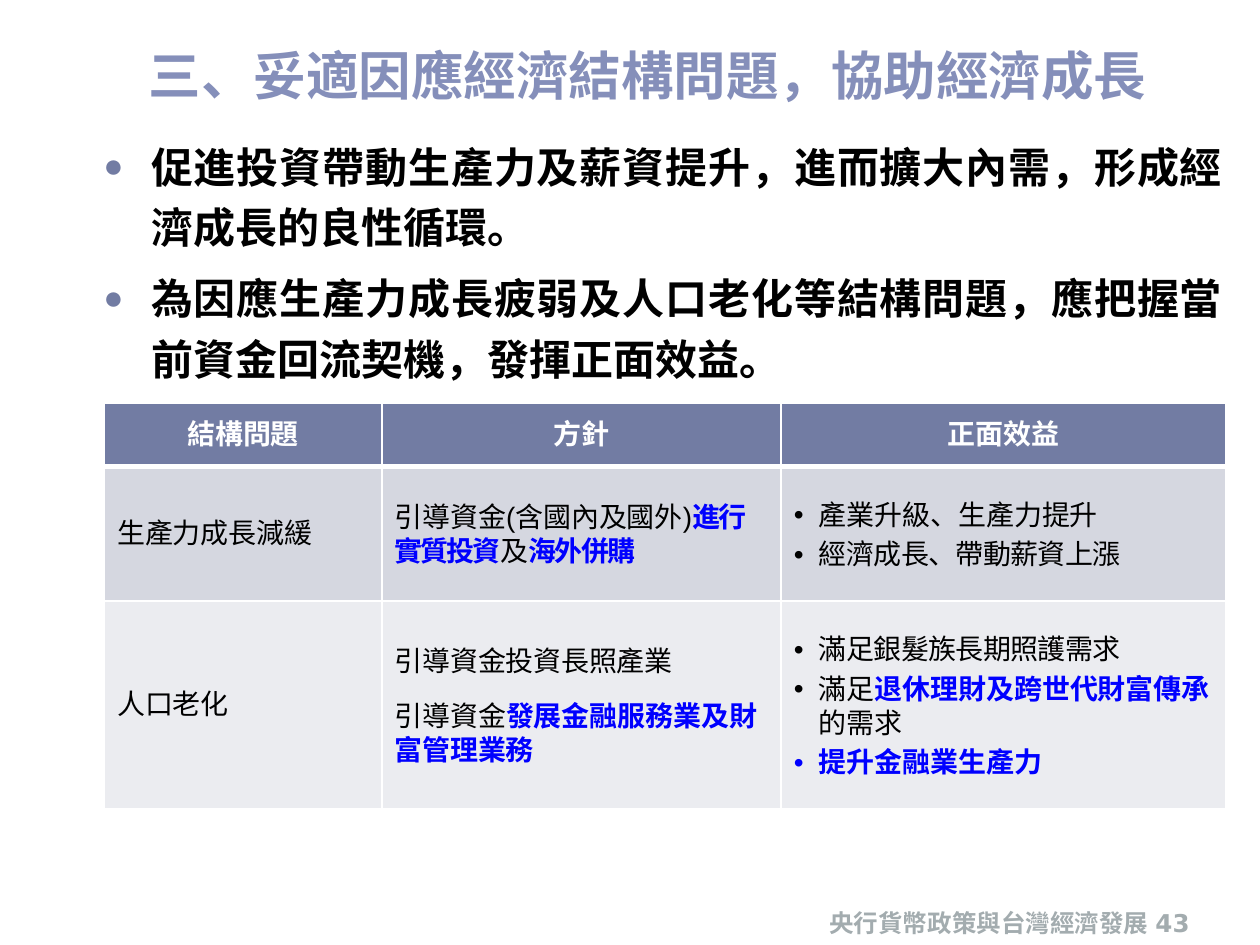
import lxml.etree
import pptx
import pptx.dml.color
import pptx.enum.text
import pptx.oxml.ns
import pptx.util

Inches = pptx.util.Inches
Pt = pptx.util.Pt
ALIGN = pptx.enum.text.PP_ALIGN
ANCHOR = pptx.enum.text.MSO_ANCHOR
SANS, ARIAL, NOTO = "DejaVu Sans", "Arial", "Noto Sans CJK SC"
BLACK, WHITE, BLUE, SLATE = "000000", "FFFFFF", "0000FF", "727CA3"
PERIWINKLE, GRAY = "858FBA", "A3ACAF"
ROW_FILLS = [SLATE, "D5D7E0", "EBECF0"]


def color(value):
    """Turn a hex string into a colour."""
    return pptx.dml.color.RGBColor.from_string(value)


def add_child(parent, tag, **attributes):
    """Append a DrawingML element with the given attributes."""
    child = lxml.etree.SubElement(parent, pptx.oxml.ns.qn(tag))
    for name, value in attributes.items():
        child.set(name, str(value))
    return child


def add_run(paragraph, text, size, font=SANS, fill=BLACK, bold=False, spacing=0):
    """Add one styled run; spacing is the tracking in points."""
    run = paragraph.add_run()
    run.text = text
    run.font.size = Pt(size)
    run.font.bold = bold
    run.font.color.rgb = color(fill)
    run.font.name = font
    properties = run.font._element
    add_child(properties, "a:ea", typeface=font)
    if spacing:
        properties.set("spc", str(round(spacing * 100)))


def set_bullet(paragraph, symbol, left, hanging, fill=None, percent=100):
    """Give a paragraph a hanging bullet."""
    properties = paragraph._p.get_or_add_pPr()
    properties.set("marL", str(Inches(left)))
    properties.set("indent", str(-Inches(hanging)))
    if fill:
        add_child(add_child(properties, "a:buClr"), "a:srgbClr", val=fill)
    add_child(properties, "a:buSzPct", val=percent * 1000)
    add_child(properties, "a:buFont", typeface=ARIAL)
    add_child(properties, "a:buChar", char=symbol)


def add_text_frame(slide, box, anchor, insets=(0.1, 0.05, 0.1, 0.05)):
    """Add a wrapping text box and return its frame."""
    frame = slide.shapes.add_textbox(*map(Inches, box)).text_frame
    frame.word_wrap = True
    frame.vertical_anchor = anchor
    (frame.margin_left, frame.margin_top,
     frame.margin_right, frame.margin_bottom) = map(Inches, insets)
    return frame


def next_paragraph(frame, index):
    """Return the first paragraph of a frame or a new one."""
    return frame.add_paragraph() if index else frame.paragraphs[0]


def add_title(slide, box):
    """Place the slide title."""
    frame = add_text_frame(slide, box, ANCHOR.MIDDLE, (0.39, 0.05, 0.1, 0.05))
    parts = [("三、", SANS), ("妥適因應", NOTO), ("經濟結構問題，協助經濟成長", SANS)]
    for text, font in parts:
        add_run(frame.paragraphs[0], text, 30, font, PERIWINKLE, True)


def add_key_points(slide, box):
    """Place the justified bullet points."""
    frame = add_text_frame(slide, box, ANCHOR.TOP, (0.2, 0.1, 0.1, 0.05))
    points = [
        "促進投資帶動生產力及薪資提升，進而擴大內需，形成經濟成長的良性循環。",
        "為因應生產力成長疲弱及人口老化等結構問題，應把握當前資金回流契機，發揮正面效益。",
    ]
    for index, text in enumerate(points):
        paragraph = next_paragraph(frame, index)
        set_bullet(paragraph, "●", 0.57, 0.38, SLATE, 80)
        paragraph.alignment = ALIGN.JUSTIFY
        paragraph.line_spacing = 1.2
        paragraph.space_after = Pt(6)
        add_run(paragraph, text, 24, bold=True)


def add_footer(slide, box):
    """Place the deck name and, at the right end, the page number."""
    left, top, width, height = box
    number_width = 0.6
    number_left = left + width - number_width - 0.06
    items = [
        ("央行貨幣政策與台灣經濟發展", box, ALIGN.CENTER),
        ("43", (number_left, top, number_width, height), ALIGN.RIGHT),
    ]
    for text, place, alignment in items:
        frame = add_text_frame(slide, place, ANCHOR.BOTTOM)
        frame.paragraphs[0].alignment = alignment
        add_run(frame.paragraphs[0], text, 14, fill=GRAY, bold=True)


def set_borders(cell, top, bottom):
    """Draw white cell borders, with top and bottom widths in points."""
    properties = cell._tc.get_or_add_tcPr()
    widths = {"a:lnL": 1, "a:lnR": 1, "a:lnT": top, "a:lnB": bottom}
    for tag, width in widths.items():
        line = add_child(properties, tag, w=Pt(width))
        add_child(add_child(line, "a:solidFill"), "a:srgbClr", val=WHITE)


def plain(text, spacing=0):
    """Describe a black table run."""
    return dict(text=text, spacing=spacing)


def strong(text, spacing=0):
    """Describe a bold blue table run."""
    return dict(text=text, spacing=spacing, fill=BLUE, bold=True)


def heading(text, font=ARIAL):
    """Describe a header cell."""
    return [[dict(text=text, font=font, fill=WHITE, bold=True)]]


def fill_cell(cell, paragraphs, row, column):
    """Write the paragraphs of one cell in the style of its row and column."""
    set_borders(cell, 3 if row == 1 else 1, 3 if row == 0 else 1)
    cell.fill.solid()
    cell.fill.fore_color.rgb = color(ROW_FILLS[row])
    cell.vertical_anchor = ANCHOR.MIDDLE
    for index, runs in enumerate(paragraphs):
        paragraph = next_paragraph(cell.text_frame, index)
        if row == 0:
            paragraph.alignment = ALIGN.CENTER
        elif column > 0:
            if column == 2:
                set_bullet(paragraph, "•", 0.2, 0.2)
            elif index < len(paragraphs) - 1:
                paragraph.space_after = Pt(6)
            paragraph.line_spacing = 1.1
            if index:
                paragraph.space_before = Pt(3 if column == 2 else 6)
        for run in runs:
            add_run(paragraph, **{"size": 16, "font": ARIAL, **run})


def add_policy_table(slide, box):
    """Place the table of problems, approaches and benefits."""
    rows = [
        [heading("結構問題"), heading("方針"), heading("正面效益", SANS)],
        [
            [[plain("生產力成長減緩")]],
            [[plain("引導資金(含國內及國外)"), strong("進行實質投資", -1),
              plain("及", -1), strong("海外併購", -1)]],
            [[plain("產業升級、生產力提升")],
             [plain("經濟成長、帶動薪資上漲", -0.3)]],
        ],
        [
            [[plain("人口老化")]],
            [[plain("引導資金投資"), plain("長照產業", -0.3)],
             [plain("引導資金"), strong("發展金融服務業及財富管理業務")]],
            [[plain("滿足銀髮族長期照護需求", -0.3)],
             [plain("滿足"), strong("退休理財及跨世代財富傳承"), plain("的需求")],
             [strong("提升金融業生產力")]],
        ],
    ]
    table = slide.shapes.add_table(3, 3, *map(Inches, box)).table
    for column, width in zip(table.columns, (2.2, 3.17, 3.53)):
        column.width = Inches(width)
    for row, height in zip(table.rows, (0.5, 1.07, 1.65)):
        row.height = Inches(height)
    for row, cells in enumerate(rows):
        for column, paragraphs in enumerate(cells):
            fill_cell(table.cell(row, column), paragraphs, row, column)


def main():
    """Build and save the slide."""
    presentation = pptx.Presentation()
    presentation.slide_width, presentation.slide_height = Inches(10), Inches(7.5)
    slide = presentation.slides.add_slide(presentation.slide_layouts[6])
    add_title(slide, (0.79, 0.24, 9.02, 0.71))
    add_key_points(slide, (0.43, 0.94, 9.37, 6.1))
    add_footer(slide, (6.1, 7.09, 3.5, 0.4))
    add_policy_table(slide, (0.83, 3.2, 8.9, 3.22))
    presentation.save("out.pptx")


if __name__ == "__main__":
    main()
